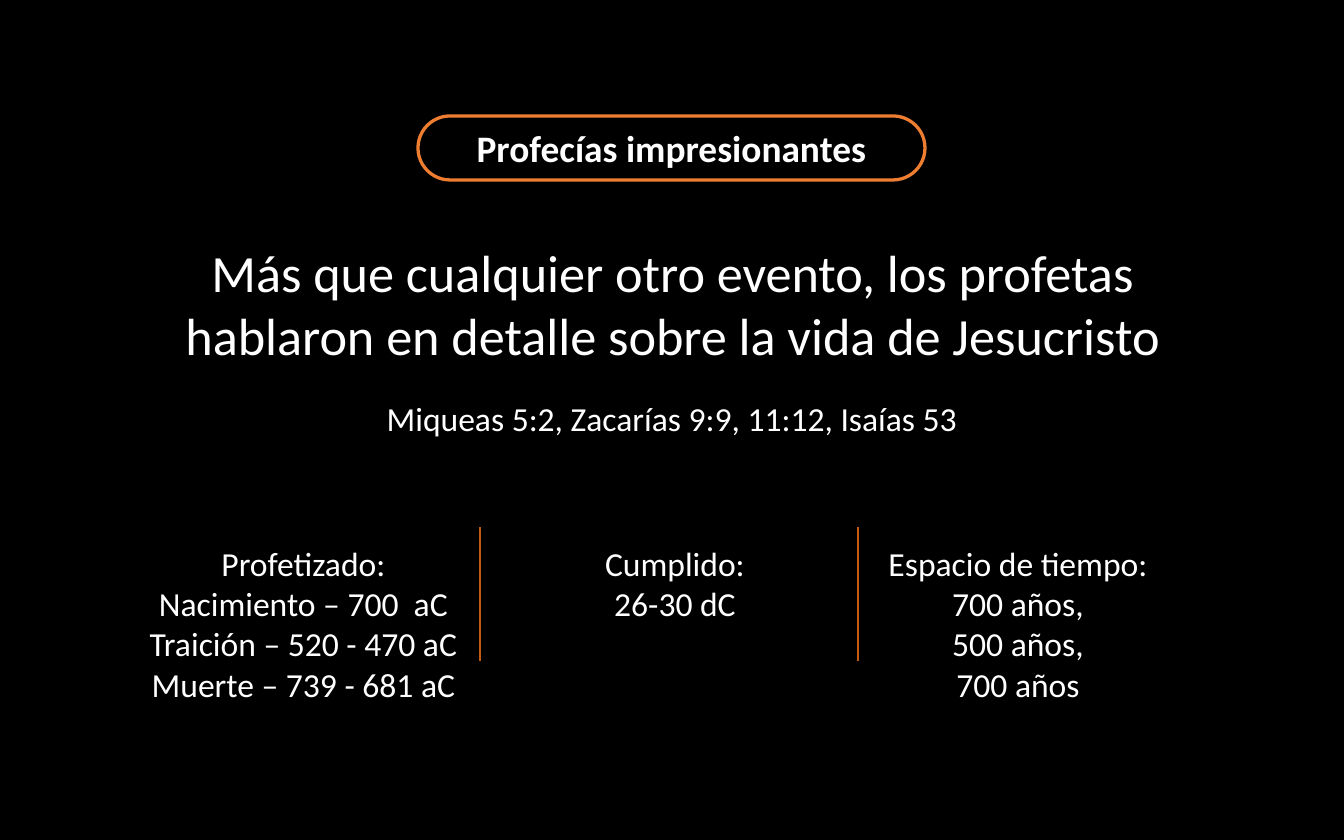
from pptx import Presentation
from pptx.dml.color import RGBColor
from pptx.enum.shapes import MSO_CONNECTOR, MSO_SHAPE
from pptx.enum.text import MSO_ANCHOR, MSO_AUTO_SIZE, PP_ALIGN
from pptx.util import Emu, Pt
from lxml.etree import SubElement
from pptx.oxml.ns import qn

WIDTH, HEIGHT = 1344, 840
SCALE = 914400 * 10 / WIDTH
COLORS = {"bg": "000000", "text": "FFFFFF", "pill": "ED7D31", "rule": "C55A11"}


def px(n):
    return Emu(round(n * SCALE))


def rgb(name):
    return RGBColor.from_string(COLORS[name])


def write(tf, paragraphs, size=18, bold=False, color="text", anchor=MSO_ANCHOR.TOP):
    """Fill a text frame; a newline inside a paragraph is a line break."""
    tf.word_wrap = True
    tf.vertical_anchor = anchor
    for i, text in enumerate(paragraphs):
        p = tf.paragraphs[0] if i == 0 else tf.add_paragraph()
        p.text = text
        p.alignment = PP_ALIGN.CENTER
        for r in p.runs:
            r.font.name = "Calibri"
            r.font.size = Pt(size)
            r.font.bold = bold
            r.font.color.rgb = rgb(color)


class Deck:
    def __init__(self):
        self.prs = Presentation()
        self.prs.slide_width, self.prs.slide_height = px(WIDTH), px(HEIGHT)
        self.s = self.prs.slides.add_slide(self.prs.slide_layouts[6])
        fill = self.s.background.fill
        fill.solid()
        fill.fore_color.rgb = rgb("bg")

    def pill(self, x, y, w, h, text):
        sp = self.s.shapes.add_shape(
            MSO_SHAPE.ROUNDED_RECTANGLE, px(x), px(y), px(w), px(h))
        sp.adjustments[0] = 0.5
        sp.shadow.inherit = False
        sp.fill.background()
        sp.line.color.rgb = rgb("pill")
        sp.line.width = Pt(1.75)
        write(sp.text_frame, [text], size=20, bold=True, anchor=MSO_ANCHOR.MIDDLE)

    def text(self, x, y, w, h, *paragraphs, **fmt):
        tf = self.s.shapes.add_textbox(px(x), px(y), px(w), px(h)).text_frame
        write(tf, paragraphs, **fmt)
        tf.auto_size = MSO_AUTO_SIZE.SHAPE_TO_FIT_TEXT

    def rule(self, x, top, bottom):
        line = self.s.shapes.add_connector(
            MSO_CONNECTOR.STRAIGHT, px(x), px(bottom), px(x), px(top))
        line.line.color.rgb = rgb("rule")
        line.line.width = Pt(1)
        SubElement(line._element.spPr, qn("a:effectLst"))


def main():
    d = Deck()

    # Title and main statement
    d.pill(418, 116, 507, 64, "Profecías impresionantes")
    d.text(89, 234, 1167, 140,
           "Más que cualquier otro evento, los profetas\n"
           "hablaron en detalle sobre la vida de Jesucristo", size=28)
    d.text(357, 391, 630, 54, "Miqueas 5:2, Zacarías 9:9, 11:12, Isaías 53")

    # Three columns: prophecy, fulfilment, time span
    columns = [
        (126, 355, 176, ["Profetizado:", "Nacimiento – 700  aC\n"
                         "Traición – 520 - 470 aC\nMuerte – 739 - 681 aC"]),
        (520, 310, 95, ["Cumplido:", "26-30 dC"]),
        (863, 310, 176, ["Espacio de tiempo:", "700 años,", "500 años,", "700 años"]),
    ]
    for x, w, h, lines in columns:
        d.text(x, 536, w, h, *lines)

    # Column separators
    for x in (480, 858):
        d.rule(x, 527, 661)

    d.prs.save("out.pptx")


if __name__ == "__main__":
    main()
